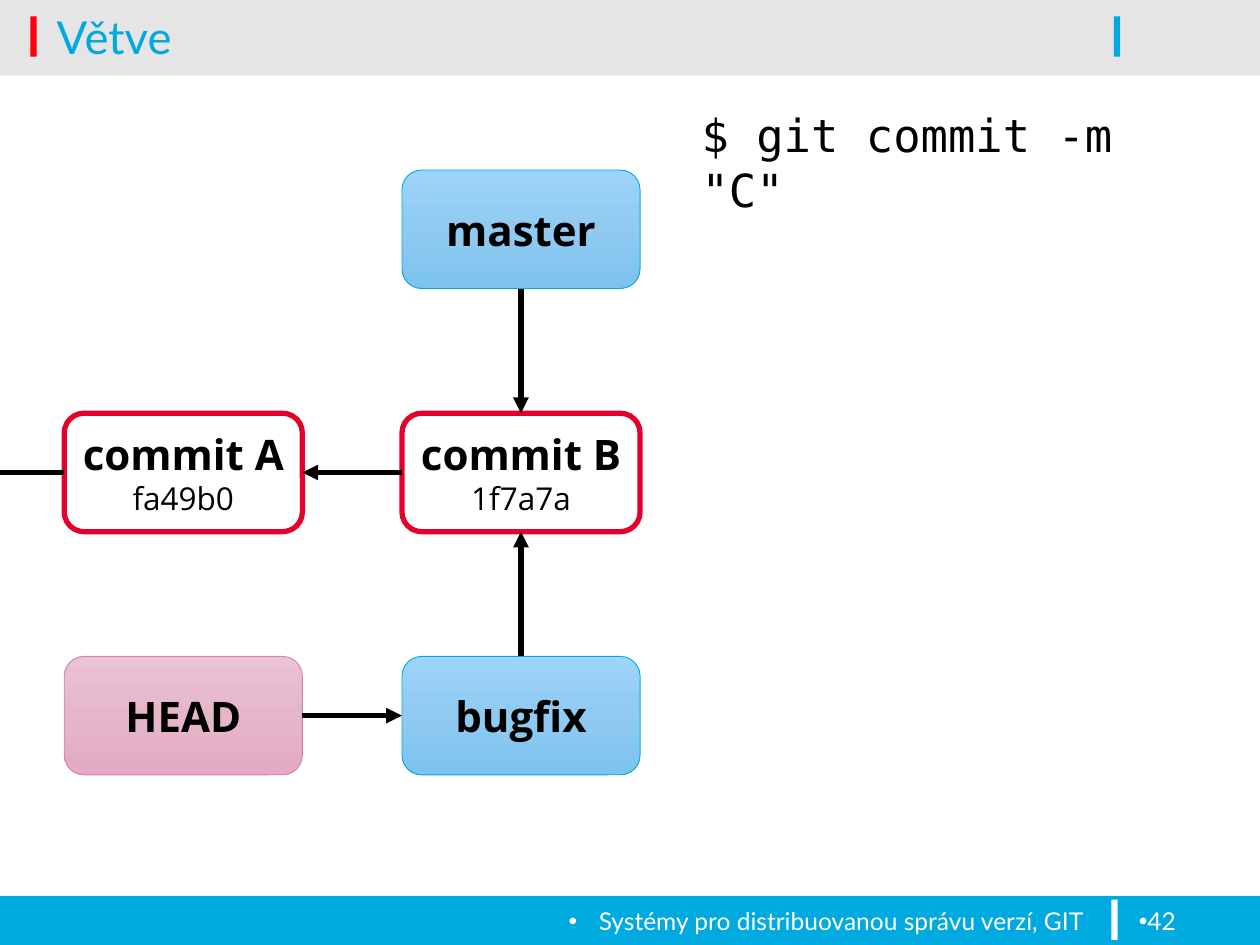
from copy import deepcopy

from lxml import etree
from pptx import Presentation
from pptx import util as u
from pptx.dml.color import RGBColor
from pptx.enum import shapes, text
from pptx.oxml.ns import qn

BLUE, RED, WHITE, BLACK = "00A9E0", "E4002B", "FFFFFF", "000000"
BRANCH = ("9DD4F9", "90CAF1", "7CC3EF")
HEAD = ("EAC3D4", "E5B6CA", "E4AAC3")
TOP, LEFT, BOTTOM, RIGHT = range(4)  # connection sites of a box


def colour(hex_string):
    return RGBColor.from_string(hex_string)


class Deck:
    """Style, diagram grid and current slide."""
    title_font, box_font, code_font = "Lato", "Open Sans", "DejaVu Sans Mono"
    width, height = 10, 7.5
    grid_left, grid_top = 0.51, 1.35
    column_step, row_step = 2.68, 1.93
    box_width, box_height = 1.89, 0.94

    def __init__(self):
        self.presentation = Presentation()
        self.presentation.slide_width = u.Inches(self.width)
        self.presentation.slide_height = u.Inches(self.height)
        layout = self.presentation.slide_layouts.get_by_name("Title Only")
        self.slide = self.presentation.slides.add_slide(layout)

    def run(self, paragraph, words, size, font, hex_string, bold=False):
        run = paragraph.add_run()
        run.text = words
        run.font.size, run.font.name, run.font.bold = u.Pt(size), font, bold
        run.font.color.rgb = colour(hex_string)

    def bar(self, left, top, width, height, fill):
        bar = self.slide.shapes.add_shape(
            shapes.MSO_SHAPE.RECTANGLE, *map(u.Inches, (left, top, width, height)))
        bar.shadow.inherit = False
        bar.fill.solid()
        bar.fill.fore_color.rgb = colour(fill)
        bar.line.fill.background()

    def title(self, words):
        """Fill the title placeholder and bring it in front of the bars."""
        title = self.slide.shapes.title
        title._element.getparent().append(title._element)
        title.left, title.top = u.Inches(0.35), u.Inches(-0.11)
        title.width, title.height = u.Inches(8.42), u.Inches(0.79)
        title.text_frame.vertical_anchor = text.MSO_ANCHOR.MIDDLE
        paragraph = title.text_frame.paragraphs[0]
        paragraph.alignment = text.PP_ALIGN.LEFT
        self.run(paragraph, words, 26, self.title_font, BLUE)

    def text_box(self, left, top, width, height, words, size, font, hex_string,
                 align=text.PP_ALIGN.LEFT, bullet_indent=None):
        """Text box; a bullet is shown when bullet_indent (inches) is given."""
        box = self.slide.shapes.add_textbox(
            *map(u.Inches, (left, top, width, height)))
        box.text_frame.word_wrap = True
        paragraph = box.text_frame.paragraphs[0]
        paragraph.alignment = align
        if bullet_indent is not None:
            properties = paragraph._p.get_or_add_pPr()
            properties.set("marL", str(u.Inches(bullet_indent)))
            properties.set("indent", str(-u.Inches(bullet_indent)))
            etree.SubElement(properties, qn("a:buFont"), typeface="Arial")
            etree.SubElement(properties, qn("a:buChar"), char="•")
        self.run(paragraph, words, size, font, hex_string)

    def box(self, column, row, label, line, line_width):
        box = self.slide.shapes.add_shape(
            shapes.MSO_SHAPE.ROUNDED_RECTANGLE,
            u.Inches(self.grid_left + column * self.column_step),
            u.Inches(self.grid_top + row * self.row_step),
            u.Inches(self.box_width), u.Inches(self.box_height))
        box.shadow.inherit = False
        box.line.color.rgb = colour(line)
        box.line.width = u.Pt(line_width)
        box.text_frame.vertical_anchor = text.MSO_ANCHOR.MIDDLE
        paragraph = box.text_frame.paragraphs[0]
        paragraph.alignment = text.PP_ALIGN.CENTER
        self.run(paragraph, label, 24, self.box_font, BLACK, bold=True)
        return box

    def reference(self, column, row, label, gradient, line):
        box = self.box(column, row, label, line, 0.5)
        box.fill.gradient()
        box.fill.gradient_angle = 270
        stop_list = box._element.spPr.find(".//" + qn("a:gsLst"))
        stop_list.insert(1, deepcopy(stop_list[0]))
        for index, stop in enumerate(box.fill.gradient_stops):
            stop.position = index / 2
            stop.color.rgb = colour(gradient[index])
        return box

    def commit(self, column, row, label, digest):
        box = self.box(column, row, label, RED, 3)
        box.fill.solid()
        box.fill.fore_color.rgb = colour(WHITE)
        paragraph = box.text_frame.paragraphs[0]
        paragraph.add_line_break()
        self.run(paragraph, digest, 18, self.box_font, BLACK)
        return box

    def line(self, start=None, end=None, points=(0, 0, 0, 0), arrow=True):
        """Line between (box, site) pairs, or between points given in inches."""
        line = self.slide.shapes.add_connector(
            shapes.MSO_CONNECTOR.STRAIGHT, *map(u.Inches, points))
        if start:
            line.begin_connect(*start)
        if end:
            line.end_connect(*end)
        line.line.color.rgb = colour(BLACK)
        line.line.width = u.Pt(3)
        if arrow:
            etree.SubElement(line.line._get_or_add_ln(), qn("a:tailEnd"),
                             type="triangle")
        etree.SubElement(line._element.spPr, qn("a:effectLst"))


def main():
    deck = Deck()
    deck.bar(0, 7.11, deck.width, 0.39, BLUE)
    deck.bar(0, 0, deck.width, 0.6, "E5E5E5")
    for left, top, fill in ((0.24, 0.13, "FE000C"), (8.82, 7.14, WHITE),
                            (8.84, 0.13, BLUE)):
        deck.bar(left, top, 0.05, 0.32, fill)

    deck.title("Větve")
    deck.text_box(0.12, 7.14, 8.58, 0.36,
                  "Systémy pro distribuovanou správu verzí, GIT", 14,
                  deck.title_font, WHITE, text.PP_ALIGN.RIGHT, bullet_indent=0.24)
    deck.text_box(8.94, 7.14, 0.9, 0.36, "42", 14, deck.title_font, WHITE,
                  bullet_indent=0)
    deck.text_box(5.47, 0.8, 4, 0.54, '$ git commit -m "C"', 26,
                  deck.code_font, BLACK)

    master = deck.reference(1, 0, "master", BRANCH, BLUE)
    commit_a = deck.commit(0, 1, "commit A", "fa49b0")
    commit_b = deck.commit(1, 1, "commit B", "1f7a7a")
    head = deck.reference(0, 2, "HEAD", HEAD, "D582A9")
    bugfix = deck.reference(1, 2, "bugfix", BRANCH, BLUE)

    deck.line((master, BOTTOM), (commit_b, TOP))
    deck.line((commit_b, LEFT), (commit_a, RIGHT))
    deck.line((head, RIGHT), (bugfix, LEFT))
    deck.line((bugfix, TOP), (commit_b, BOTTOM))
    deck.line(start=(commit_a, LEFT), points=(0.51, 3.75, 0, 3.75), arrow=False)

    deck.presentation.save("out.pptx")


if __name__ == "__main__":
    main()
